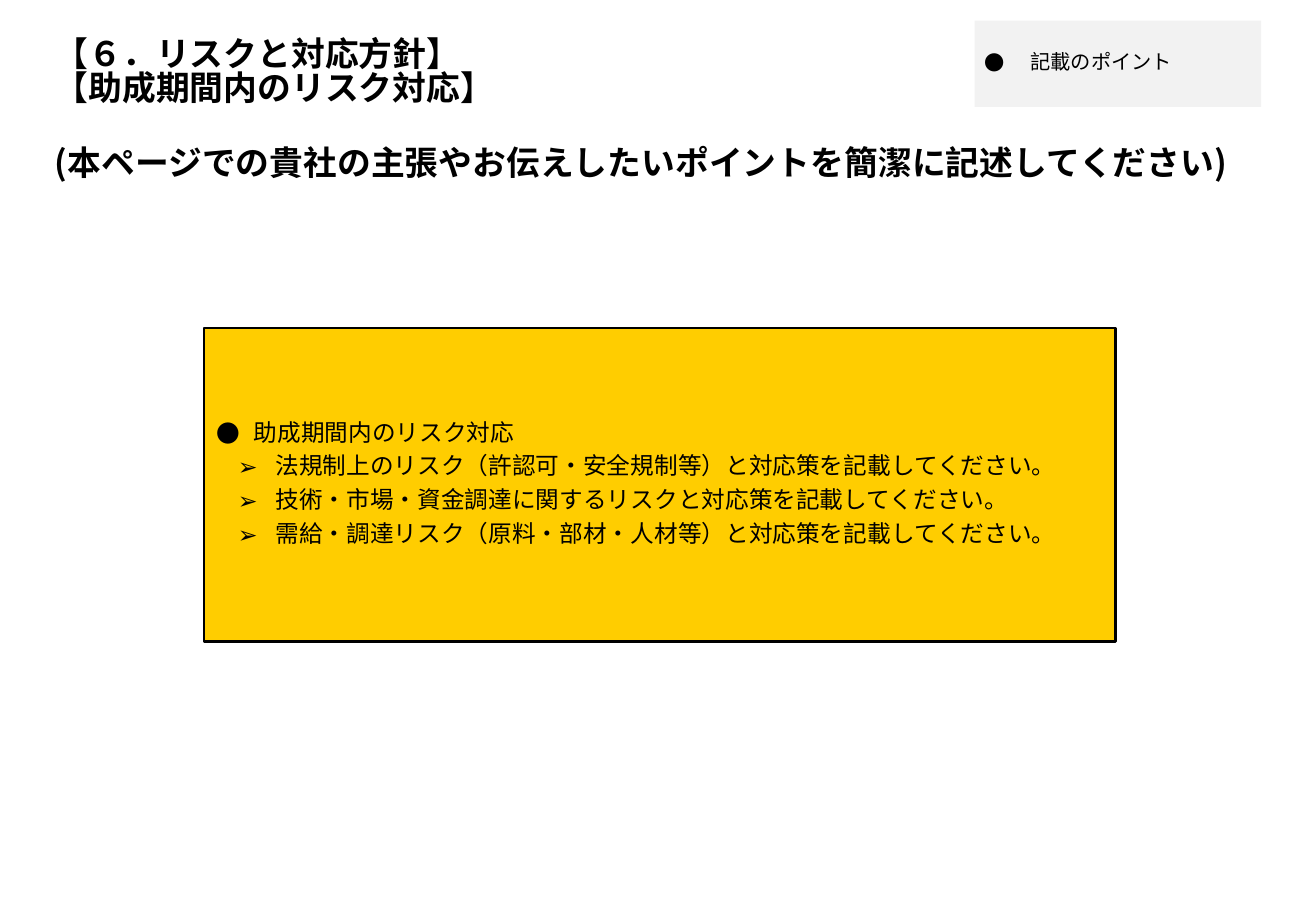
from lxml import etree
from pptx import Presentation
from pptx import util as u
from pptx.dml.color import RGBColor
from pptx.enum import shapes, text
from pptx.oxml.ns import qn

FONT = "Noto Sans CJK JP"
BLACK = RGBColor(0x00, 0x00, 0x00)
GRAY = RGBColor(0xF2, 0xF2, 0xF2)
YELLOW = RGBColor(0xFF, 0xCD, 0x00)
LINE_SPACING = 0.83
LEFT, TOP, HEAD_HEIGHT = 0.45, 0.17, 0.71


def write(box, lines, size, bold=False, anchor=text.MSO_ANCHOR.MIDDLE,
          margins=(0, 0), space_before=0):
    """Fill a box with (text, bullet, indent, level) lines."""
    frame = box.text_frame
    frame.word_wrap = True
    frame.auto_size = text.MSO_AUTO_SIZE.NONE
    frame.vertical_anchor = anchor
    frame.margin_left = frame.margin_right = u.Inches(margins[0])
    frame.margin_top = frame.margin_bottom = u.Inches(margins[1])
    for number, (words, bullet, indent, level) in enumerate(lines):
        para = frame.add_paragraph() if number else frame.paragraphs[0]
        para.text = words
        para.level = level
        para.alignment = text.PP_ALIGN.LEFT
        para.line_spacing = LINE_SPACING
        para.space_before = u.Pt(space_before if number else 0)
        if bullet:
            hanging = 0.38 if level == 0 and len(lines) == 1 else 0.31
            properties = para._p.get_or_add_pPr()
            properties.set("marL", str(u.Inches(indent)))
            properties.set("indent", str(-u.Inches(hanging)))
            etree.SubElement(properties, qn("a:buFont")).set("typeface", FONT)
            etree.SubElement(properties, qn("a:buChar")).set("char", bullet)
        for span in para.runs:
            span.font.size = u.Pt(size)
            span.font.bold = bold
            span.font.name = FONT
            span.font.color.rgb = BLACK
            east_asian = etree.Element(qn("a:ea"), typeface=FONT)
            span.font._element.find(qn("a:latin")).addnext(east_asian)


deck = Presentation()
deck.slide_width, deck.slide_height = u.Inches(10.83), u.Inches(7.5)
page = deck.slides.add_slide(deck.slide_layouts[5])

# Title
title = page.shapes.title
title.left, title.top = u.Inches(LEFT), u.Inches(TOP)
title.width, title.height = u.Inches(7.45), u.Inches(HEAD_HEIGHT)
write(title, [("【６．リスクと対応方針】\v【助成期間内のリスク対応】", None, 0, 0)], 20,
      bold=True, anchor=text.MSO_ANCHOR.BOTTOM)

# Key message
message = page.shapes.add_textbox(u.Inches(LEFT), u.Inches(1.11),
                                  u.Inches(9.92), u.Inches(0.5))
write(message, [("(本ページでの貴社の主張やお伝えしたいポイントを簡潔に記述してください)",
                 None, 0, 0)], 20, bold=True)

# Filled boxes: writing hint and guidance
hint_lines = [("記載のポイント", "●", 0.38, 0)]
guidance_lines = [("助成期間内のリスク対応", "●", 0.31, 0)] + [
    (words, "➢", 0.49, 1) for words in (
        "法規制上のリスク（許認可・安全規制等）と対応策を記載してください。",
        "技術・市場・資金調達に関するリスクと対応策を記載してください。",
        "需給・調達リスク（原料・部材・人材等）と対応策を記載してください。")]
for place, fill, outlined, lines, size, margins in (
        ((8.02, TOP, 2.36, HEAD_HEIGHT), GRAY, False, hint_lines, 12, (0.08, 0.04)),
        ((1.68, 2.7, 7.5, 2.58), YELLOW, True, guidance_lines, 14, (0.1, 0.05))):
    box = page.shapes.add_shape(shapes.MSO_SHAPE.RECTANGLE,
                                *(u.Inches(length) for length in place))
    box.shadow.inherit = False
    box.fill.solid()
    box.fill.fore_color.rgb = fill
    if outlined:
        box.line.color.rgb = BLACK
        box.line.width = u.Pt(1.5)
    else:
        box.line.fill.background()
    write(box, lines, size, margins=margins, space_before=6)

deck.save("out.pptx")
